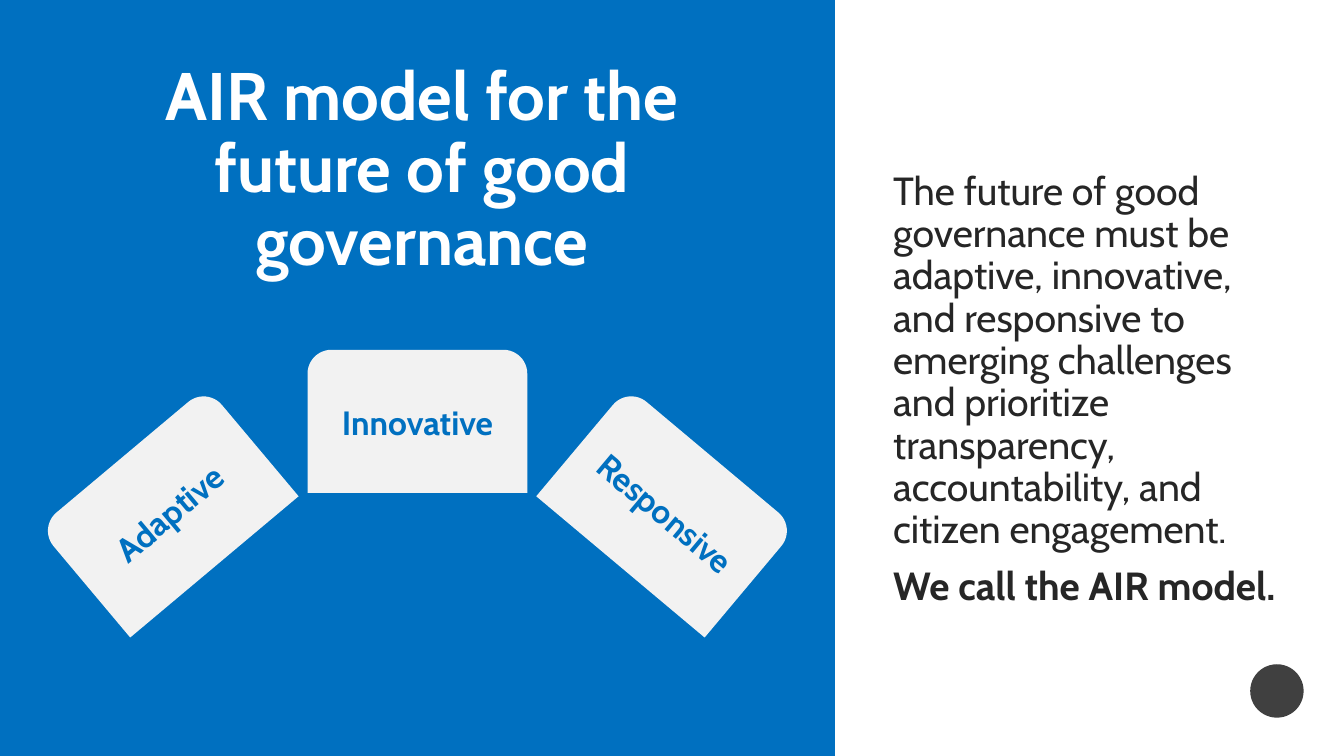
from dataclasses import dataclass

import pptx
import pptx.dml.color
import pptx.enum.shapes
import pptx.enum.text
import pptx.shapes.autoshape
import pptx.text.text
import pptx.util

Inches = pptx.util.Inches
Kind = pptx.enum.shapes.MSO_SHAPE
Align = pptx.enum.text.PP_ALIGN
Anchor = pptx.enum.text.MSO_ANCHOR


@dataclass(frozen=True)
class Theme:
    font: str = "Cabin"
    blue: str = "0070C0"
    white: str = "FFFFFF"
    card: str = "F2F2F2"
    ink: str = "262626"
    badge: str = "404040"
    title_size: int = 48
    body_size: int = 28
    label_size: int = 24
    line_spacing: float = 0.9
    paragraph_gap: int = 10


@dataclass(frozen=True)
class Box:
    left: float
    top: float
    width: float
    height: float

    def lengths(self) -> tuple[int, int, int, int]:
        return (Inches(self.left), Inches(self.top),
                Inches(self.width), Inches(self.height))


@dataclass(frozen=True)
class Pillar:
    label: str
    left: float
    top: float
    rotation: int


@dataclass(frozen=True)
class Statement:
    text: str
    bold: bool
    gap_before: int


THEME = Theme()
PILLAR_WIDTH, PILLAR_HEIGHT = 2.18, 1.42
PILLARS = [
    Pillar("Adaptive", 0.58, 4.37, 320),
    Pillar("Innovative", 3.05, 3.47, 0),
    Pillar("Responsive", 5.52, 4.37, 40),
]
STATEMENTS = [
    Statement(
        "The future of good governance must be adaptive, innovative, and "
        "responsive to emerging challenges and prioritize transparency, "
        "accountability, and citizen engagement.", False, 0),
    Statement("We call the AIR model.", True, THEME.paragraph_gap),
]


def add_filled(shapes, kind: Kind, box: Box,
               color: str) -> pptx.shapes.autoshape.Shape:
    filled = shapes.add_shape(kind, *box.lengths())
    filled.shadow.inherit = False
    filled.fill.solid()
    filled.fill.fore_color.rgb = pptx.dml.color.RGBColor.from_string(color)
    filled.line.fill.background()
    return filled


def add_text_frame(shapes, box: Box, anchor: Anchor) -> pptx.text.text.TextFrame:
    frame = shapes.add_textbox(*box.lengths()).text_frame
    frame.word_wrap = True
    frame.vertical_anchor = anchor
    return frame


def write(paragraph, text: str, size: int, color: str, bold: bool,
          alignment: Align) -> None:
    paragraph.alignment = alignment
    paragraph.line_spacing = THEME.line_spacing
    run = paragraph.add_run()
    run.text = text
    run.font.name = THEME.font
    run.font.size = pptx.util.Pt(size)
    run.font.bold = bold
    run.font.color.rgb = pptx.dml.color.RGBColor.from_string(color)


def add_pillar(shapes, pillar: Pillar) -> None:
    card = add_filled(
        shapes, Kind.ROUND_2_SAME_RECTANGLE,
        Box(pillar.left, pillar.top, PILLAR_WIDTH, PILLAR_HEIGHT), THEME.card)
    card.rotation = pillar.rotation
    frame = card.text_frame
    frame.word_wrap = True
    frame.vertical_anchor = Anchor.MIDDLE
    frame.margin_top = frame.margin_bottom = Inches(0.03)
    write(frame.paragraphs[0], pillar.label, THEME.label_size, THEME.blue,
          True, Align.CENTER)


def add_statements(shapes, box: Box) -> None:
    frame = add_text_frame(shapes, box, Anchor.TOP)
    for index, statement in enumerate(STATEMENTS):
        paragraph = frame.add_paragraph() if index else frame.paragraphs[0]
        paragraph.space_before = pptx.util.Pt(statement.gap_before)
        write(paragraph, statement.text, THEME.body_size, THEME.ink,
              statement.bold, Align.LEFT)


def main() -> None:
    presentation = pptx.Presentation()
    presentation.slide_width = Inches(13.33)
    presentation.slide_height = Inches(7.5)
    slide = presentation.slides.add_slide(presentation.slide_layouts[6])

    add_filled(slide.shapes, Kind.RECTANGLE, Box(0, 0, 8.28, 7.5), THEME.blue)
    title = add_text_frame(slide.shapes, Box(0.7, 0.97, 6.97, 1.45), Anchor.MIDDLE)
    write(title.paragraphs[0], "AIR model for the future of good governance",
          THEME.title_size, THEME.white, True, Align.CENTER)

    air_model = slide.shapes.add_group_shape()
    for pillar in PILLARS:
        add_pillar(air_model.shapes, pillar)

    add_statements(slide.shapes, Box(8.76, 1.65, 4.18, 4.21))
    add_filled(slide.shapes, Kind.OVAL, Box(12.4, 6.59, 0.53, 0.53), THEME.badge)
    presentation.save("out.pptx")


if __name__ == "__main__":
    main()
